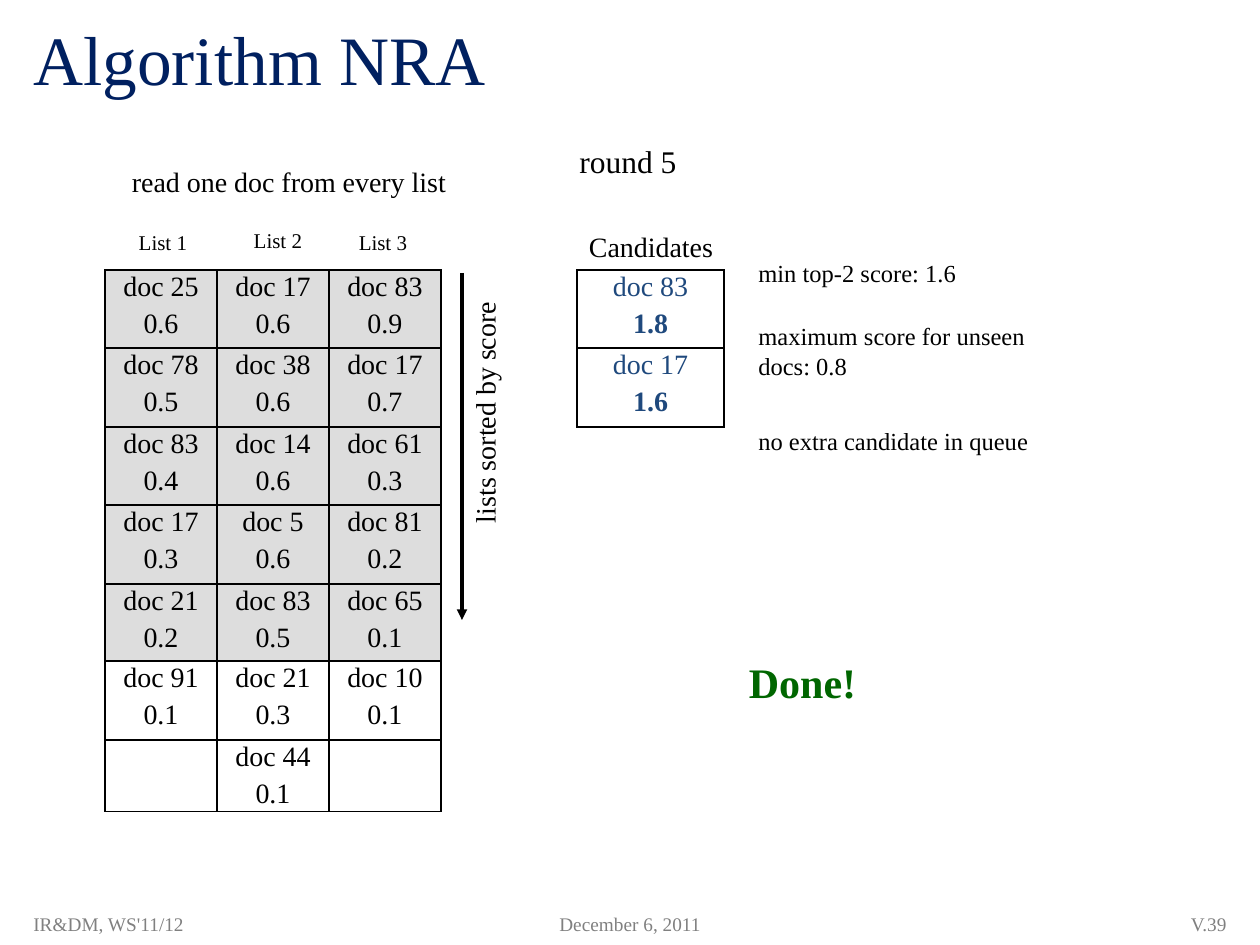
"""Build the slide that shows round 5 of the NRA top-k algorithm."""
from dataclasses import dataclass

from lxml.etree import SubElement
from pptx import Presentation
from pptx.dml.color import RGBColor
from pptx.enum.shapes import MSO_CONNECTOR
from pptx.enum.text import MSO_ANCHOR, MSO_AUTO_SIZE, PP_ALIGN
from pptx.oxml.ns import qn
from pptx.slide import Slide
from pptx.table import _Cell
from pptx.text.text import _Paragraph
from pptx.util import Emu, Pt

PIXELS_PER_INCH = 126


@dataclass(frozen=True)
class Theme:
    font: str = "Times New Roman"
    title: str = "002060"
    ink: str = "000000"
    candidate: str = "1F497D"
    done: str = "006600"
    footer: str = "808080"
    read: str = "DDDDDD"
    title_size: float = 39.6
    done_size: float = 24
    round_size: float = 18
    body_size: float = 16
    note_size: float = 14
    label_size: float = 12
    footer_size: float = 11
    score_gap: float = 3
    border: float = 1
    arrow: float = 2


THEME = Theme()


@dataclass(frozen=True)
class Label:
    text: str
    left: int
    top: int
    width: int
    height: int
    size: float = THEME.body_size
    color: str = THEME.ink
    align: PP_ALIGN = PP_ALIGN.LEFT
    bold: bool = False
    middle: bool = False
    rotation: int = 0


@dataclass(frozen=True)
class Entry:
    document: str
    score: str


@dataclass(frozen=True)
class RankedTable:
    left: int
    top: int
    column_width: int
    row_heights: list[int]
    columns: list[list[Entry]]
    color: str = THEME.ink
    bold_scores: bool = False
    read_rows: int = 0


CENTER = PP_ALIGN.CENTER
LABELS = [
    Label("Algorithm NRA", 21, 10, 1218, 95, THEME.title_size, THEME.title, middle=True),
    Label("lists sorted by score", 338, 365, 294, 47, rotation=270),
    Label("Candidates", 546, 223, 210, 47, align=CENTER),
    Label("min top-2 score: 1.6", 746, 252, 252, 42, THEME.note_size),
    Label("maximum score for unseen docs: 0.8", 746, 315, 315, 72, THEME.note_size),
    Label("no extra candidate in queue", 746, 420, 431, 42, THEME.note_size),
    Label("Done!", 640, 650, 325, 63, THEME.done_size, THEME.done, CENTER, bold=True),
    Label("round 5", 567, 136, 473, 50, THEME.round_size),
    Label("List 1", 105, 223, 116, 38, THEME.label_size, align=CENTER),
    Label("List 2", 210, 221, 136, 38, THEME.label_size, align=CENTER),
    Label("List 3", 325, 223, 116, 38, THEME.label_size, align=CENTER),
    Label("read one doc from every list", 95, 158, 388, 47, align=CENTER),
    Label("December 6, 2011", 483, 903, 294, 42, THEME.footer_size, THEME.footer,
          CENTER, middle=True),
    Label("V.39", 966, 903, 273, 42, THEME.footer_size, THEME.footer,
          PP_ALIGN.RIGHT, middle=True),
    Label("IR&DM, WS'11/12", 21, 903, 378, 42, THEME.footer_size, THEME.footer, middle=True),
]


def entries(*pairs: tuple[int, str]) -> list[Entry]:
    """Turn document numbers and scores into list entries."""
    return [Entry(f"doc {number}", score) for number, score in pairs]


TABLES = [
    RankedTable(105, 270, 112, [78, 79, 78, 79, 77, 79, 64], [
        entries((25, "0.6"), (78, "0.5"), (83, "0.4"), (17, "0.3"), (21, "0.2"), (91, "0.1")),
        entries((17, "0.6"), (38, "0.6"), (14, "0.6"), (5, "0.6"), (83, "0.5"), (21, "0.3"),
                (44, "0.1")),
        entries((83, "0.9"), (17, "0.7"), (61, "0.3"), (81, "0.2"), (65, "0.1"), (10, "0.1")),
    ], read_rows=5),
    RankedTable(577, 270, 147, [78, 79], [entries((83, "1.8"), (17, "1.6"))],
                THEME.candidate, bold_scores=True),
]


def px(length: int) -> Emu:
    """Turn pixels into EMU."""
    return Emu(round(length * 914400 / PIXELS_PER_INCH))


def format_paragraph(paragraph: _Paragraph, size: float, color: str,
                     align: PP_ALIGN, bold: bool = False) -> None:
    """Set alignment and the font of every run."""
    paragraph.alignment = align
    for run in paragraph.runs:
        run.font.name = THEME.font
        run.font.size = Pt(size)
        run.font.bold = bold
        run.font.color.rgb = RGBColor.from_string(color)


def add_label(slide: Slide, label: Label) -> None:
    """Add one text box."""
    shape = slide.shapes.add_textbox(
        px(label.left), px(label.top), px(label.width), px(label.height))
    shape.rotation = label.rotation
    frame = shape.text_frame
    frame.word_wrap = True
    frame.auto_size = MSO_AUTO_SIZE.NONE if label.middle else MSO_AUTO_SIZE.SHAPE_TO_FIT_TEXT
    frame.vertical_anchor = MSO_ANCHOR.MIDDLE if label.middle else MSO_ANCHOR.TOP
    frame.text = label.text
    format_paragraph(frame.paragraphs[0], label.size, label.color, label.align, label.bold)


def add_borders(cell: _Cell) -> None:
    """Draw a thin line on all four sides, ahead of the cell fill."""
    properties = cell._tc.get_or_add_tcPr()
    for position, side in enumerate(("a:lnL", "a:lnR", "a:lnT", "a:lnB")):
        line = SubElement(properties, qn(side), w=str(Pt(THEME.border)))
        fill = SubElement(line, qn("a:solidFill"))
        SubElement(fill, qn("a:srgbClr"), val=THEME.ink)
        properties.insert(position, line)


def fill_cell(cell: _Cell, entry: Entry, ranked: RankedTable) -> None:
    """Write a document and, below it, its score."""
    cell.text_frame.text = f"{entry.document}\n{entry.score}"
    document, score = cell.text_frame.paragraphs
    format_paragraph(document, THEME.body_size, ranked.color, CENTER)
    format_paragraph(score, THEME.body_size, ranked.color, CENTER, ranked.bold_scores)
    score.space_before = Pt(THEME.score_gap)


def add_ranked_table(slide: Slide, ranked: RankedTable) -> None:
    """Add a table with one ranked list in each column."""
    row_count, column_count = len(ranked.row_heights), len(ranked.columns)
    table = slide.shapes.add_table(
        row_count, column_count, px(ranked.left), px(ranked.top),
        px(ranked.column_width * column_count), px(sum(ranked.row_heights))).table
    table.first_row = table.horz_banding = False
    for column in table.columns:
        column.width = px(ranked.column_width)
    for row_index, height in enumerate(ranked.row_heights):
        table.rows[row_index].height = px(height)
        for column_index, column_entries in enumerate(ranked.columns):
            cell = table.cell(row_index, column_index)
            cell.margin_left = cell.margin_right = px(6)
            cell.margin_top = cell.margin_bottom = px(2)
            if row_index < ranked.read_rows:
                cell.fill.solid()
                cell.fill.fore_color.rgb = RGBColor.from_string(THEME.read)
            else:
                cell.fill.background()
            add_borders(cell)
            if row_index < len(column_entries):
                fill_cell(cell, column_entries[row_index], ranked)


def add_down_arrow(slide: Slide, left: int, top: int, bottom: int) -> None:
    """Add a vertical arrow that points down."""
    arrow = slide.shapes.add_connector(
        MSO_CONNECTOR.STRAIGHT, px(left), px(top), px(left), px(bottom))
    arrow.line.width = Pt(THEME.arrow)
    arrow.line.color.rgb = RGBColor.from_string(THEME.ink)
    SubElement(arrow.line._get_or_add_ln(), qn("a:tailEnd"), type="triangle")
    SubElement(arrow._element.spPr, qn("a:effectLst"))


def main() -> None:
    """Build and save the presentation."""
    presentation = Presentation()
    presentation.slide_width, presentation.slide_height = px(1260), px(945)
    slide = presentation.slides.add_slide(presentation.slide_layouts[6])
    for ranked in TABLES:
        add_ranked_table(slide, ranked)
    add_down_arrow(slide, 462, 273, 620)
    for label in LABELS:
        add_label(slide, label)
    presentation.save("out.pptx")


if __name__ == "__main__":
    main()
